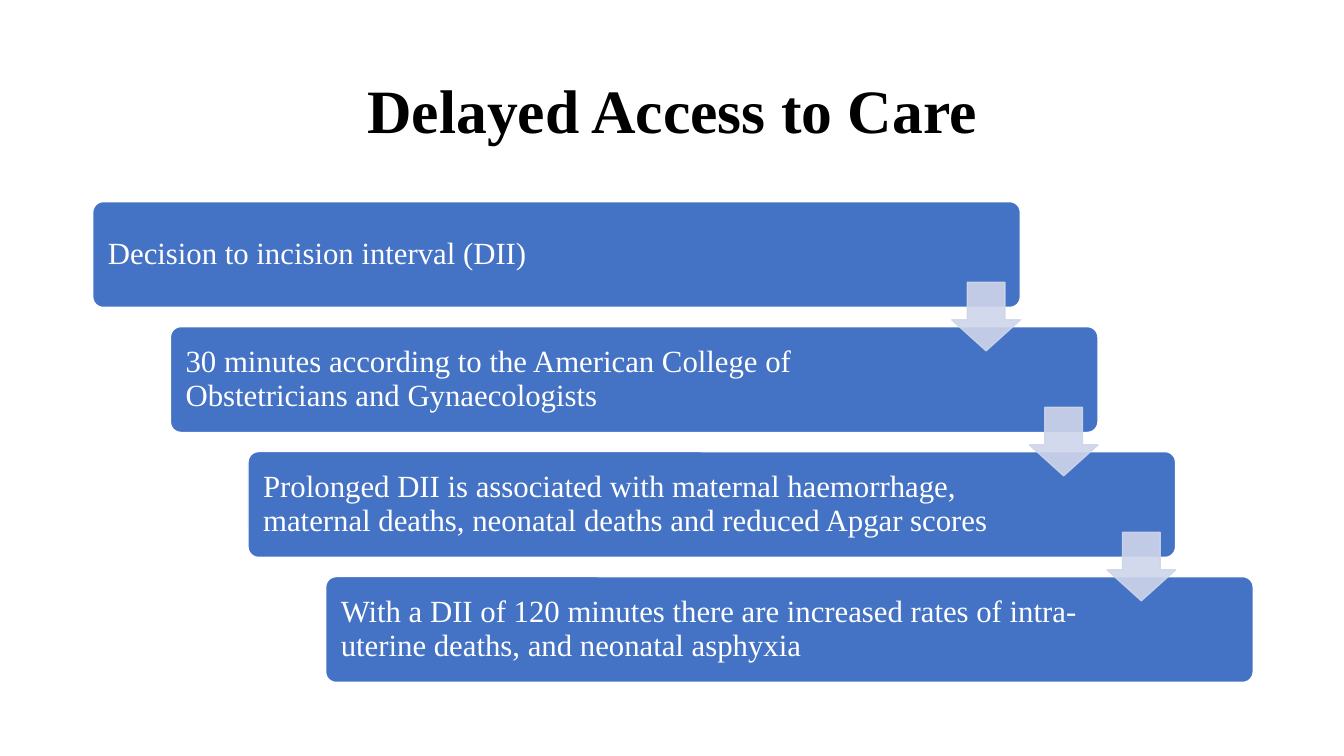
from pptx import Presentation
from pptx.dml.color import RGBColor
from pptx.enum import shapes, text
from pptx.oxml.ns import qn
from pptx.util import Inches, Pt
from lxml import etree

BLUE = RGBColor(0x44, 0x72, 0xC4)
PALE = RGBColor(0xCF, 0xD5, 0xEA)
WHITE = RGBColor(0xFF, 0xFF, 0xFF)
BLACK = RGBColor(0, 0, 0)


def write(sp, words, size, color, bold=False, align=text.PP_ALIGN.LEFT):
    tf = sp.text_frame
    tf.word_wrap = True
    tf.vertical_anchor = text.MSO_ANCHOR.MIDDLE
    p = tf.paragraphs[0]
    p.alignment = align
    p.line_spacing = 0.9
    r = p.add_run()
    r.text = words
    r.font.name = "Times New Roman"
    r.font.size = Pt(size)
    r.font.bold = bold
    r.font.color.rgb = color
    return tf


def add_block(s, kind, box, fill, line, adjustments):
    sp = s.shapes.add_shape(kind, *[Inches(v) for v in box])
    sp.shadow.inherit = False
    sp.fill.solid()
    sp.fill.fore_color.rgb = fill
    sp.line.color.rgb = line
    sp.line.width = Pt(1)
    for i, value in enumerate(adjustments):
        sp.adjustments[i] = value
    return sp


prs = Presentation()
prs.slide_width, prs.slide_height = Inches(13.33), Inches(7.5)
s = prs.slides.add_slide(prs.slide_layouts[5])

# Title
title = s.shapes.title
title.left, title.top = Inches(0.92), Inches(0.4)
title.width, title.height = Inches(11.5), Inches(1.45)
write(title, "Delayed Access to Care", 44, BLACK, bold=True,
      align=text.PP_ALIGN.CENTER)

# Staircase of steps
steps = [
    "Decision to incision interval (DII)",
    "30 minutes according to the American College of "
    "Obstetricians and Gynaecologists",
    "Prolonged DII is associated with maternal haemorrhage, "
    "maternal deaths, neonatal deaths and reduced Apgar scores",
    "With a DII of 120 minutes there are increased rates of "
    "intra-uterine deaths, and neonatal asphyxia",
]
LEFT, TOP, WIDTH, HEIGHT = 0.92, 2, 9.2, 1.05
DX, DY = 0.77, 1.24
for i, step in enumerate(steps):
    sp = add_block(s, shapes.MSO_SHAPE.ROUNDED_RECTANGLE,
                   (LEFT + i * DX, TOP + i * DY, WIDTH, HEIGHT),
                   BLUE, WHITE, [0.1])
    tf = write(sp, step, 22, WHITE)
    tf.margin_left, tf.margin_right = Inches(0.12), Inches(1.57)

# Arrows linking each step to the next
ARROW = 0.68
for i in range(len(steps) - 1):
    sp = add_block(s, shapes.MSO_SHAPE.DOWN_ARROW,
                   (LEFT + WIDTH - ARROW + i * DX, 2.8 + i * DY, ARROW, ARROW),
                   PALE, PALE, [0.55, 0.45])
    for color in sp._element.spPr.iter(qn("a:srgbClr")):
        etree.SubElement(color, qn("a:alpha"), val="90000")

prs.save("out.pptx")
